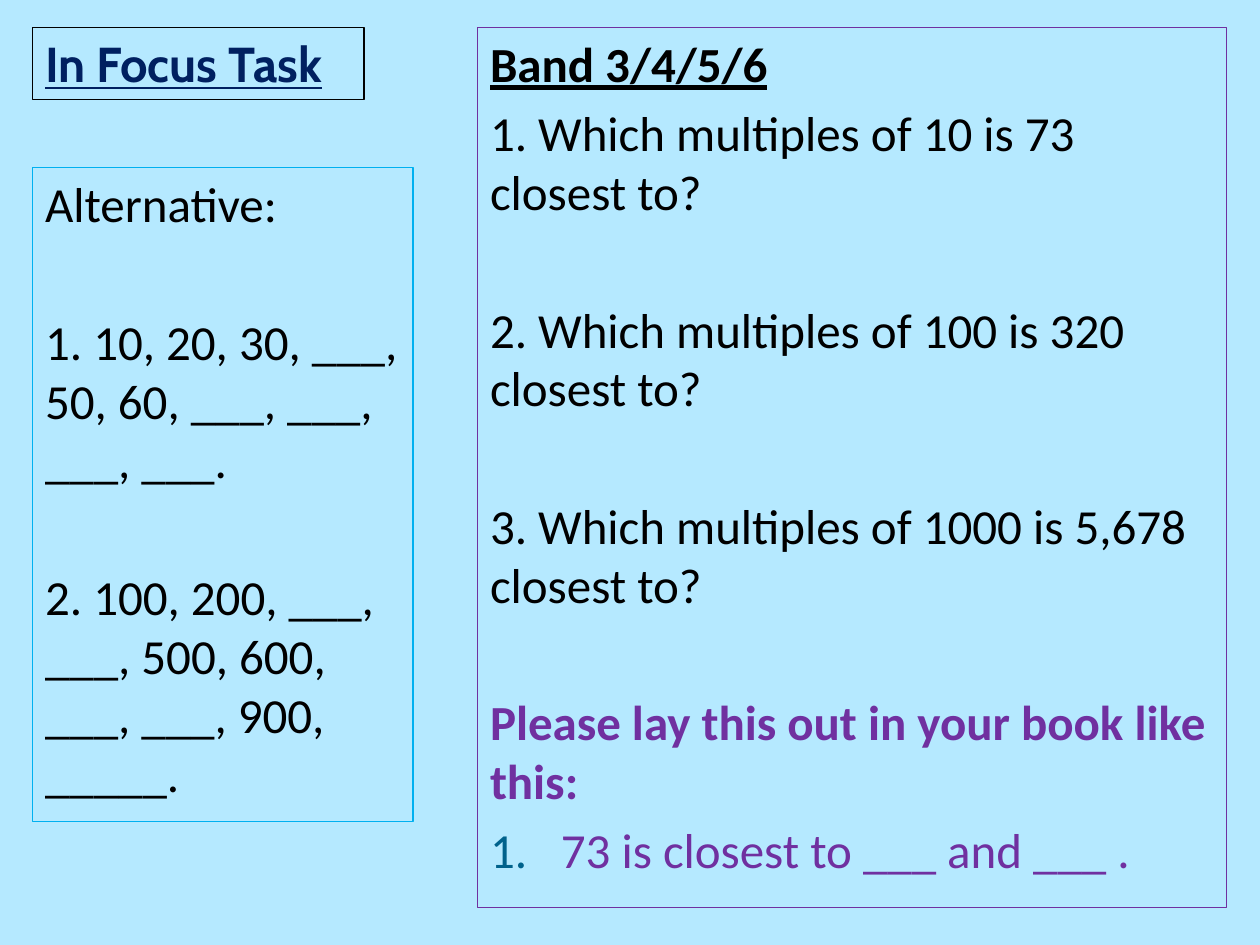
from dataclasses import dataclass

from lxml import etree
from pptx import Presentation
from pptx import util as u
from pptx.dml.color import RGBColor
from pptx.enum import text
from pptx.oxml import ns


@dataclass(frozen=True)
class Theme:
    background: str = "B5E9FF"
    ink: str = "000000"
    navy: str = "002060"
    purple: str = "7030A0"
    sky: str = "00B0F0"
    number: str = "00628C"
    heading_font: str = "Cabin"
    body_font: str = "Calibri"
    size: float = 28
    line_width: float = 0.75
    near: float = 5.6   # space before a following paragraph
    far: float = 45     # space before a new question


theme = Theme()


def add_panel(box, border, paragraphs):
    """Outlined text panel; each paragraph is (wording, space before, format)."""
    panel = slide.shapes.add_textbox(*(u.Cm(value) for value in box))
    panel.line.color.rgb = RGBColor.from_string(border)
    panel.line.width = u.Pt(theme.line_width)
    frame = panel.text_frame
    frame.word_wrap = True
    frame.vertical_anchor = text.MSO_ANCHOR.TOP
    for index, (wording, before, changes) in enumerate(paragraphs):
        paragraph = frame.paragraphs[0] if index == 0 else frame.add_paragraph()
        if before:
            paragraph.space_before = u.Pt(before)
        run = paragraph.add_run()
        run.text = wording
        look = {"name": theme.body_font, "size": u.Pt(theme.size),
                "bold": False, "underline": False, "color": theme.ink, **changes}
        run.font.color.rgb = RGBColor.from_string(look.pop("color"))
        for attribute, value in look.items():
            setattr(run.font, attribute, value)
    return frame


def number_paragraph(paragraph, color, indent):
    """Automatic 1. 2. 3. numbering with a hanging indent."""
    properties = paragraph._p.get_or_add_pPr()
    properties.set("marL", str(indent))
    properties.set("indent", str(-indent))
    bullet_color = etree.SubElement(properties, ns.qn("a:buClr"))
    etree.SubElement(bullet_color, ns.qn("a:srgbClr"), val=color)
    etree.SubElement(properties, ns.qn("a:buAutoNum"), type="arabicPeriod")


# Slide and background
deck = Presentation()
deck.slide_width, deck.slide_height = u.Cm(25.4), u.Cm(19.05)
slide = deck.slides.add_slide(deck.slide_layouts[6])
slide.background.fill.solid()
slide.background.fill.fore_color.rgb = RGBColor.from_string(theme.background)

left, top = 0.66, 0.56
heading = {"bold": True, "underline": True}

# Title
add_panel((left, top, 6.68, 1.45), theme.ink, [
    ("In Focus Task", 0,
     {**heading, "name": theme.heading_font, "color": theme.navy}),
])

# Main questions and how to lay out the answers
questions = [
    (f"{number}. Which multiples of {multiple} is {value} closest to?",
     theme.near if number == 1 else theme.far, {})
    for number, (multiple, value) in enumerate(
        [("10", "73"), ("100", "320"), ("1000", "5,678")], start=1)
]
band = add_panel((9.63, top, 15.09, 17.73), theme.purple, [
    ("Band 3/4/5/6", 0, heading),
    *questions,
    ("Please lay this out in your book like this:", theme.far,
     {"bold": True, "color": theme.purple}),
    ("73 is closest to ___ and ___ .", theme.near, {"color": theme.purple}),
])
number_paragraph(band.paragraphs[-1], theme.number, u.Cm(1.43))

# Alternative sequences
add_panel((left, 3.38, 7.67, 13.18), theme.sky, [
    ("Alternative:", 0, {}),
    ("1. 10, 20, 30, ___, 50, 60, ___, ___, ___, ___.", theme.far, {}),
    ("2. 100, 200, ___, ___, 500, 600, ___, ___, 900, _____.", theme.far, {}),
])

deck.save("out.pptx")
